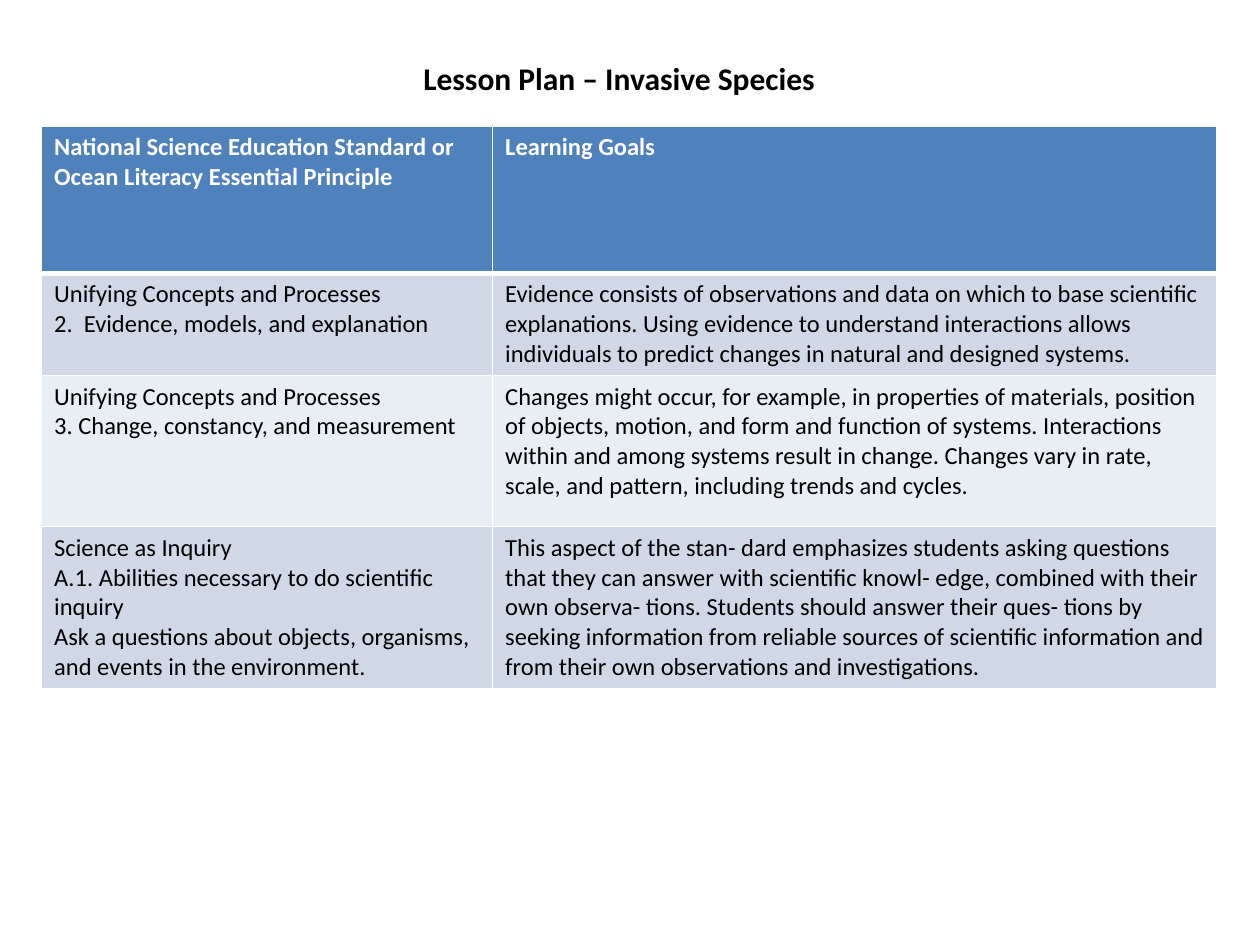
from dataclasses import dataclass

from lxml.etree import SubElement
from pptx import Presentation
from pptx.dml.color import RGBColor
from pptx.enum.text import PP_ALIGN as Align
from pptx.oxml.ns import qn
from pptx.util import Inches, Pt

FONT = "Calibri"
WHITE, BLACK = "FFFFFF", "000000"
HEADER_FILL = "4F81BD"
BAND_FILLS = ("D0D8E8", "E9EDF4")
COLUMN_WIDTHS = (3.58, 5.75)


@dataclass(frozen=True)
class LessonRow:
    height: float
    standard: tuple[str, ...]
    goal: str


ROWS = (
    LessonRow(
        1.17,
        ("National Science Education Standard or Ocean Literacy Essential Principle",),
        "Learning Goals",
    ),
    LessonRow(
        0.76,
        ("Unifying Concepts and Processes", "2.  Evidence, models, and explanation"),
        "Evidence consists of observations and data on which to base scientific "
        "explanations. Using evidence to understand interactions allows individuals "
        "to predict changes in natural and designed systems.",
    ),
    LessonRow(
        1.2,
        ("Unifying Concepts and Processes", "3. Change, constancy, and measurement"),
        "Changes might occur, for example, in properties of materials, position of "
        "objects, motion, and form and function of systems. Interactions within and "
        "among systems result in change. Changes vary in rate, scale, and pattern, "
        "including trends and cycles.",
    ),
    LessonRow(
        1.2,
        (
            "Science as Inquiry",
            "A.1. Abilities necessary to do scientific inquiry",
            "Ask a questions about objects, organisms, and events in the environment.",
        ),
        "This aspect of the stan- dard emphasizes students asking questions that they "
        "can answer with scientific knowl- edge, combined with their own observa- tions. "
        "Students should answer their ques- tions by seeking information from reliable "
        "sources of scientific information and from their own observations and "
        "investigations.",
    ),
)


def color(value: str) -> RGBColor:
    return RGBColor.from_string(value)


def write(frame, lines: tuple[str, ...], size: int, ink: str, bold: bool, align=Align.LEFT) -> None:
    for index, line in enumerate(lines):
        para = frame.add_paragraph() if index else frame.paragraphs[0]
        para.alignment = align
        span = para.add_run()
        span.text = line
        span.font.name = FONT
        span.font.size = Pt(size)
        span.font.bold = bold
        span.font.color.rgb = color(ink)


def add_borders(cell, top: float, bottom: float) -> None:
    properties = cell._tc.get_or_add_tcPr()
    for side, width in (("L", 1), ("R", 1), ("T", top), ("B", bottom)):
        line = SubElement(properties, qn(f"a:ln{side}"), w=str(Pt(width)))
        fill = SubElement(line, qn("a:solidFill"))
        SubElement(fill, qn("a:srgbClr"), val=WHITE)


def add_lesson_table(page) -> None:
    table = page.shapes.add_table(
        len(ROWS), len(COLUMN_WIDTHS), Inches(0.33), Inches(1),
        Inches(sum(COLUMN_WIDTHS)), Inches(sum(row.height for row in ROWS)),
    ).table
    for column, width in zip(table.columns, COLUMN_WIDTHS):
        column.width = Inches(width)
    for index, row in enumerate(ROWS):
        header = index == 0
        table.rows[index].height = Inches(row.height)
        for cell, lines in zip(table.rows[index].cells, (row.standard, (row.goal,))):
            add_borders(cell, 3 if index == 1 else 1, 3 if header else 1)
            cell.fill.solid()
            cell.fill.fore_color.rgb = color(HEADER_FILL if header else BAND_FILLS[(index - 1) % 2])
            write(cell.text_frame, lines, 14, WHITE if header else BLACK, header)


def add_title(page) -> None:
    box = page.shapes.add_textbox(Inches(1.83), Inches(0.42), Inches(6.17), Inches(0.4))
    box.text_frame.word_wrap = True
    write(box.text_frame, ("Lesson Plan – Invasive Species",), 18, BLACK, True, Align.CENTER)


def main() -> None:
    """Build the invasive species lesson plan slide."""
    deck = Presentation()
    deck.slide_width, deck.slide_height = Inches(10), Inches(7.5)
    page = deck.slides.add_slide(deck.slide_layouts[6])
    add_lesson_table(page)
    add_title(page)
    deck.save("out.pptx")


if __name__ == "__main__":
    main()
